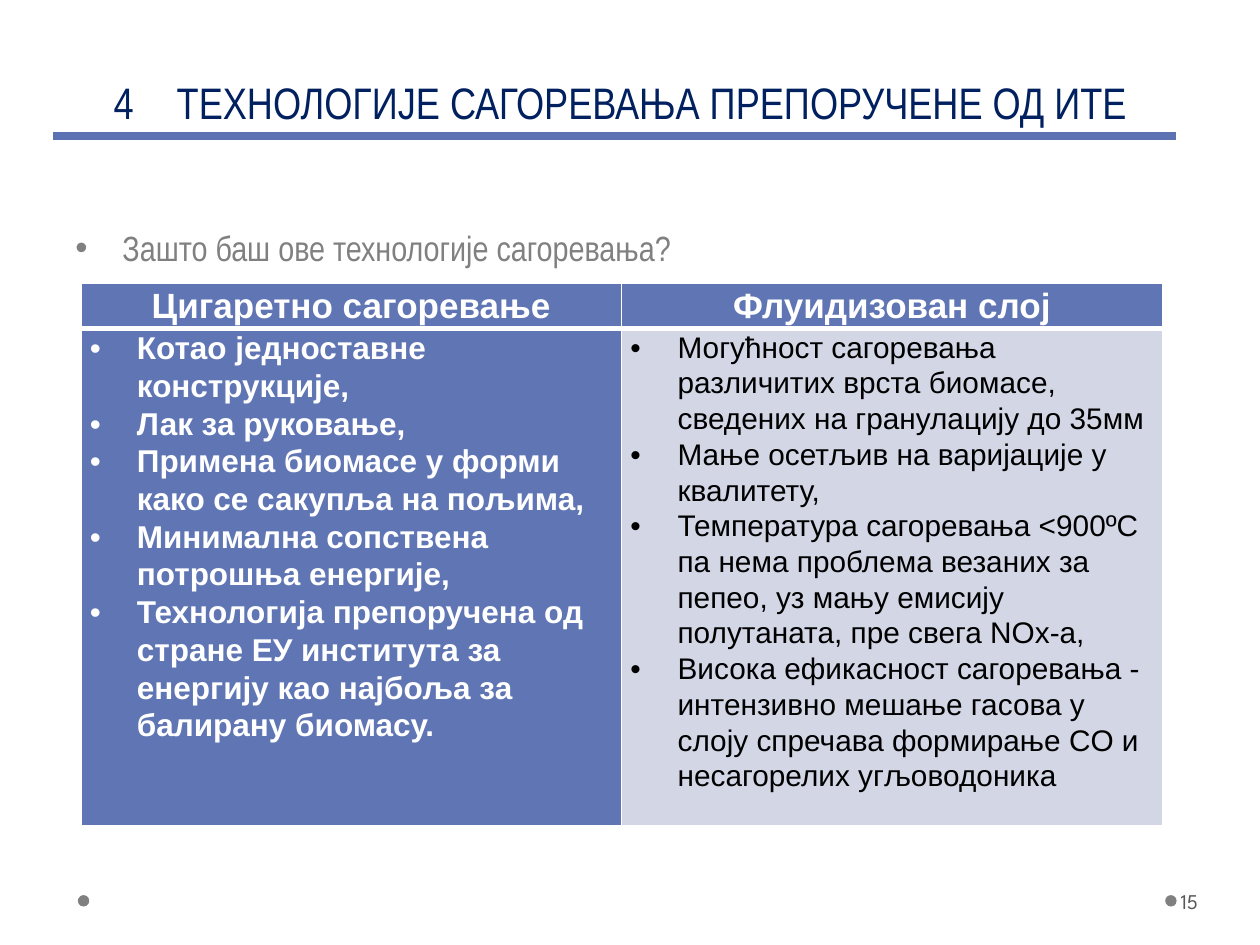
from dataclasses import dataclass

from lxml.etree import SubElement
from pptx import Presentation
from pptx.dml.color import RGBColor
from pptx.enum.shapes import MSO_CONNECTOR, MSO_SHAPE
from pptx.enum.text import MSO_ANCHOR, PP_ALIGN
from pptx.oxml.ns import qn
from pptx.util import Cm, Pt


@dataclass(frozen=True)
class Theme:
    navy: str = "002060"
    rule: str = "5C72B2"
    blue: str = "6076B4"
    pale: str = "D2D6E5"
    grey: str = "808080"
    dark_grey: str = "595959"
    white: str = "FFFFFF"
    black: str = "000000"
    narrow: str = "Arial Narrow"
    sans: str = "Arial"
    number_font: str = "League Spartan"
    title_size: float = 25.2
    heading_size: float = 20
    left_size: float = 18
    right_size: float = 17
    number_size: float = 12
    indent: float = 0.95


THEME = Theme()

TITLE = "4\tТЕХНОЛОГИЈЕ САГОРЕВАЊА ПРЕПОРУЧЕНЕ ОД ИТЕ"
QUESTION = "Зашто баш ове технологије сагоревања?"
HEADINGS = ["Цигаретно сагоревање", "Флуидизован слој"]
CIGARETTE_POINTS = [
    "Котао једноставне конструкције,",
    "Лак за руковање,",
    "Примена биомасе у форми како се сакупља на пољима,",
    "Минимална сопствена потрошња енергије,",
    "Технологија препоручена од стране ЕУ института за енергију као најбоља за "
    "балирану биомасу.",
]
FLUIDIZED_POINTS = [
    "Могућност сагоревања различитих врста биомасе, сведених на гранулацију до 35мм",
    "Мање осетљив на варијације у квалитету,",
    "Температура сагоревања <900ºC па нема проблема везаних за пепео, уз мању "
    "емисију полутаната, пре свега NOx-а,",
    "Висока ефикасност сагоревања - интензивно мешање гасова у слоју спречава "
    "формирање CO и несагорелих угљоводоника",
]


def rgb(color):
    return RGBColor.from_string(color)


def write(text_frame, lines, font, size, color, bold=False, align=PP_ALIGN.LEFT,
          spacing=None):
    text_frame.word_wrap = True
    text_frame.text = "\n".join(lines)
    for paragraph in text_frame.paragraphs:
        paragraph.alignment = align
        paragraph.line_spacing = spacing
        for run in paragraph.runs:
            run.font.name, run.font.size, run.font.bold = font, Pt(size), bold
            run.font.color.rgb = rgb(color)


def add_bullets(text_frame):
    for paragraph in text_frame.paragraphs:
        properties = paragraph._p.get_or_add_pPr()
        properties.set("marL", str(Cm(THEME.indent)))
        properties.set("indent", str(-Cm(THEME.indent)))
        SubElement(properties, qn("a:buFont")).set("typeface", THEME.sans)
        SubElement(properties, qn("a:buChar")).set("char", "•")


def add_text_box(slide, left, top, width, height):
    return slide.shapes.add_textbox(Cm(left), Cm(top), Cm(width), Cm(height)).text_frame


def add_title(slide, left, top, width, height):
    text_frame = add_text_box(slide, left, top, width, height)
    text_frame.vertical_anchor = MSO_ANCHOR.BOTTOM
    write(text_frame, [TITLE], THEME.narrow, THEME.title_size, THEME.navy,
          align=PP_ALIGN.CENTER, spacing=Pt(36))
    properties = text_frame.paragraphs[0]._p.get_or_add_pPr()
    tab = SubElement(SubElement(properties, qn("a:tabLst")), qn("a:tab"))
    tab.set("pos", str(Cm(0.25)))
    tab.set("algn", "l")

    # Rule just below the title
    y = Cm(top + height + 0.02)
    rule = slide.shapes.add_connector(
        MSO_CONNECTOR.STRAIGHT, Cm(left + 0.18), y, Cm(left + width - 0.43), y)
    rule.line.color.rgb = rgb(THEME.rule)
    rule.line.width = Pt(4.5)
    SubElement(rule._element.spPr, qn("a:effectLst"))


def add_question(slide, left, top, width, height):
    text_frame = add_text_box(slide, left, top, width, height)
    write(text_frame, [QUESTION], THEME.narrow, THEME.heading_size, THEME.grey)
    text_frame.paragraphs[0].space_before = Pt(4)
    add_bullets(text_frame)


def style_cell(cell, fill, bottom_width):
    cell.margin_left = cell.margin_right = Cm(0.18)
    cell.margin_top = cell.margin_bottom = 0
    properties = cell._tc.get_or_add_tcPr()
    for side, width in (("L", 1), ("R", 1), ("T", 1), ("B", bottom_width)):
        line = SubElement(properties, qn(f"a:ln{side}"))
        line.set("w", str(Pt(width)))
        line_fill = SubElement(line, qn("a:solidFill"))
        SubElement(line_fill, qn("a:srgbClr")).set("val", THEME.white)
    cell.fill.solid()
    cell.fill.fore_color.rgb = rgb(fill)


def add_comparison(slide, left, top, width, row_heights):
    table = slide.shapes.add_table(
        2, 2, Cm(left), Cm(top), Cm(width), Cm(sum(row_heights))).table
    for row, height in zip(table.rows, row_heights):
        row.height = Cm(height)
    columns = [
        (CIGARETTE_POINTS, THEME.left_size, THEME.white, True, THEME.blue),
        (FLUIDIZED_POINTS, THEME.right_size, THEME.black, False, THEME.pale),
    ]
    for index, (points, size, color, bold, fill) in enumerate(columns):
        table.columns[index].width = Cm(width / len(columns))
        heading, body = table.cell(0, index), table.cell(1, index)
        style_cell(heading, THEME.blue, 3)
        write(heading.text_frame, [HEADINGS[index]], THEME.sans, THEME.heading_size,
              THEME.white, True, PP_ALIGN.CENTER, 1.07)
        style_cell(body, fill, 1)
        write(body.text_frame, points, THEME.sans, size, color, bold, spacing=1.07)
        add_bullets(body.text_frame)


def add_footer(slide, left, top, width, height):
    # Dots at both ends, centred on the height of the footer
    diameter = 0.23
    for x in (left, left + width - 1.78):
        dot = slide.shapes.add_shape(
            MSO_SHAPE.OVAL, Cm(x), Cm(top + (height - diameter) / 2),
            Cm(diameter), Cm(diameter))
        dot.shadow.inherit = False
        dot.fill.solid()
        dot.fill.fore_color.rgb = rgb(THEME.grey)
        dot.line.fill.background()

    # Slide number
    text_frame = add_text_box(slide, left + width - 1.55, top, 1.55, height)
    text_frame.margin_left = Cm(0.08)
    text_frame.margin_right = Cm(0.13)
    text_frame.vertical_anchor = MSO_ANCHOR.MIDDLE
    write(text_frame, ["15"], THEME.number_font, THEME.number_size, THEME.dark_grey)


def main():
    presentation = Presentation()
    presentation.slide_width, presentation.slide_height = Cm(25.4), Cm(19.05)
    slide = presentation.slides.add_slide(presentation.slide_layouts[6])
    add_footer(slide, 1.57, 17.65, 23.7, 1.02)
    add_title(slide, 0.89, 0, 23.24, 2.72)
    add_question(slide, 1.27, 4.45, 22.86, 12.57)
    add_comparison(slide, 1.63, 5.72, 21.8, (0.84, 9.35))
    presentation.save("out.pptx")


if __name__ == "__main__":
    main()
